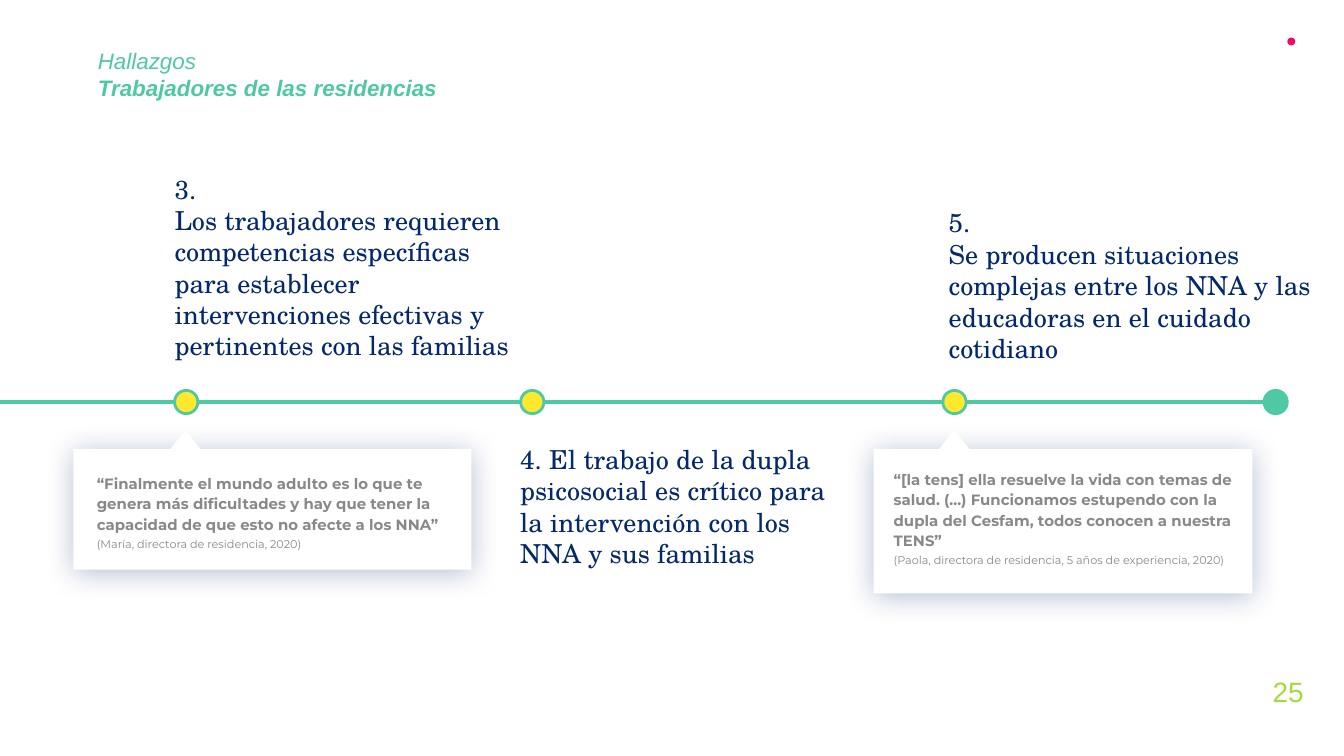
from dataclasses import dataclass

from lxml.etree import SubElement
from pptx import Presentation
from pptx.dml.color import RGBColor
from pptx.enum.shapes import MSO_CONNECTOR, MSO_SHAPE
from pptx.oxml.ns import qn
from pptx.util import Cm, Pt


@dataclass(frozen=True)
class Theme:
    green: str = "4FC9A3"
    lime: str = "A4DB3B"
    pink: str = "F20A66"
    yellow: str = "FFE82E"
    navy: str = "03286B"
    gray: str = "888888"
    white: str = "FFFFFF"
    sans: str = "Arial"
    serif: str = "TeX Gyre Schola"
    quote: str = "Montserrat"
    title: float = 12
    page: float = 15
    head: float = 14
    body: float = 8
    note: float = 6


@dataclass(frozen=True)
class Style:
    font: str
    size: float
    color: str
    bold: bool = False
    slant: bool = False


@dataclass(frozen=True)
class Box:
    left: float
    top: float
    width: float
    height: float

    def cm(self) -> tuple:
        return Cm(self.left), Cm(self.top), Cm(self.width), Cm(self.height)


@dataclass(frozen=True)
class Event:
    box: Box
    lines: tuple


@dataclass(frozen=True)
class Card:
    box: Box
    tip: float  # left edge of the pointer
    text: Box
    quote: str
    source: str


THEME = Theme()
PAD = (0.25, 0.25, 0.25, 0.25)  # left, top, right, bottom
AXIS = 7.6  # height of the timeline
DOT = 0.44
STOPS = (3.52, 10.06, 18.04)
END = 24.11
CARD_TOP = 8.49

EVENTS = (
    Event(Box(3.05, 3.02, 7.16, 1.8), (
        "3.",
        "Los trabajadores requieren competencias específicas para establecer "
        "intervenciones efectivas y pertinentes con las familias")),
    Event(Box(9.58, 8.13, 6.38, 1.8), (
        "4. El trabajo de la dupla",
        "psicosocial es crítico para la intervención con los NNA y sus familias")),
    Event(Box(17.68, 3.66, 7.52, 1.8), (
        "5.",
        "Se producen situaciones complejas entre los NNA y las educadoras "
        "en el cuidado cotidiano")),
)

CARDS = (
    Card(Box(1.39, CARD_TOP, 7.52, 2.28), 3.1, Box(1.83, 8.84, 6.76, 1.09),
         "“Finalmente el mundo adulto es lo que te genera más dificultades y hay "
         "que tener la capacidad de que esto no afecte a los NNA”",
         "(María, directora de residencia, 2020)"),
    Card(Box(16.51, CARD_TOP, 7.16, 2.73), 17.63, Box(16.89, 8.76, 6.53, 1.09),
         "“[la tens] ella resuelve la vida con temas de salud. (...) Funcionamos "
         "estupendo con la dupla del Cesfam, todos conocen a nuestra TENS”",
         "(Paola, directora de residencia, 5 años de experiencia, 2020)"),
)


def add_text(shapes, box: Box, lines: list[tuple[str, Style]], pad: tuple,
             space: float = 1, gap: float = 0) -> None:
    frame = shapes.add_textbox(*box.cm()).text_frame
    frame.word_wrap = True
    (frame.margin_left, frame.margin_top,
     frame.margin_right, frame.margin_bottom) = map(Cm, pad)
    frame.text = "\n".join(text for text, _ in lines)
    for num, (para, (_, style)) in enumerate(zip(frame.paragraphs, lines)):
        para.line_spacing = space
        para.space_before = Pt(gap if num else 0)
        for run in para.runs:
            font = run.font
            font.name, font.size = style.font, Pt(style.size)
            font.bold, font.italic = style.bold, style.slant
            font.color.rgb = RGBColor.from_string(style.color)


def add_form(shapes, kind: MSO_SHAPE, box: Box, fill: str, line: str = ""):
    form = shapes.add_shape(kind, *box.cm())
    form.shadow.inherit = False
    form.fill.solid()
    form.fill.fore_color.rgb = RGBColor.from_string(fill)
    if line:
        form.line.color.rgb = RGBColor.from_string(line)
        form.line.width = Pt(1.5)
    else:
        form.line.fill.background()
    return form


def add_glow(form) -> None:
    effects = form._element.spPr.find(qn("a:effectLst"))
    glow = SubElement(effects, qn("a:outerShdw"), blurRad=str(Pt(15.8)),
                      dist=str(Pt(1.5)), dir="5400000", algn="t", rotWithShape="0")
    tint = SubElement(glow, qn("a:srgbClr"), val=THEME.navy)
    SubElement(tint, qn("a:alpha"), val="30000")


def add_axis(shapes) -> None:
    axis = shapes.add_connector(MSO_CONNECTOR.STRAIGHT, Cm(0), Cm(AXIS),
                                Cm(END), Cm(AXIS))
    axis.line.color.rgb = RGBColor.from_string(THEME.green)
    axis.line.width = Pt(2.25)
    SubElement(axis._element.spPr, qn("a:effectLst"))


def add_stop(shapes, mid: float, fill: str) -> None:
    box = Box(mid - DOT / 2, AXIS - DOT / 2, DOT, DOT)
    add_form(shapes, MSO_SHAPE.OVAL, box, fill, THEME.green)


def add_card(shapes, card: Card) -> None:
    group = shapes.add_group_shape().shapes
    add_glow(add_form(group, MSO_SHAPE.RECTANGLE, card.box, THEME.white))
    tip = Box(card.tip, CARD_TOP - 0.36, 0.81, 0.51)
    add_form(group, MSO_SHAPE.ISOSCELES_TRIANGLE, tip, THEME.white)
    bold = Style(THEME.quote, THEME.body, THEME.gray, bold=True)
    note = Style(THEME.quote, THEME.note, THEME.gray)
    add_text(shapes, card.text, [(card.quote, bold), (card.source, note)],
             (0, 0.08, 0, 0), space=1.15, gap=1)


def main() -> None:
    deck = Presentation()
    deck.slide_width, deck.slide_height = Cm(25.4), Cm(14.29)
    shapes = deck.slides.add_slide(deck.slide_layouts[6]).shapes

    # Title, page number and corner dot
    plain = Style(THEME.sans, THEME.title, THEME.green, slant=True)
    bold = Style(THEME.sans, THEME.title, THEME.green, bold=True, slant=True)
    add_text(shapes, Box(1.6, 0.64, 8.97, 1.09),
             [("Hallazgos", plain), ("Trabajadores de las residencias", bold)], PAD)
    add_text(shapes, Box(24.05, 12.73, 0.61, 0.66),
             [("25", Style(THEME.sans, THEME.page, THEME.lime))], (0, 0.03, 0, 0))
    add_form(shapes, MSO_SHAPE.OVAL, Box(24.33, 0.71, 0.15, 0.15), THEME.pink)

    # Quote cards
    for card in CARDS:
        add_card(shapes, card)

    # Timeline
    add_axis(shapes)
    for mid in STOPS:
        add_stop(shapes, mid, THEME.yellow)
    add_stop(shapes, END, THEME.green)

    # Findings
    head = Style(THEME.serif, THEME.head, THEME.navy)
    for event in EVENTS:
        add_text(shapes, event.box, [(line, head) for line in event.lines], PAD)

    deck.save("out.pptx")


if __name__ == "__main__":
    main()
